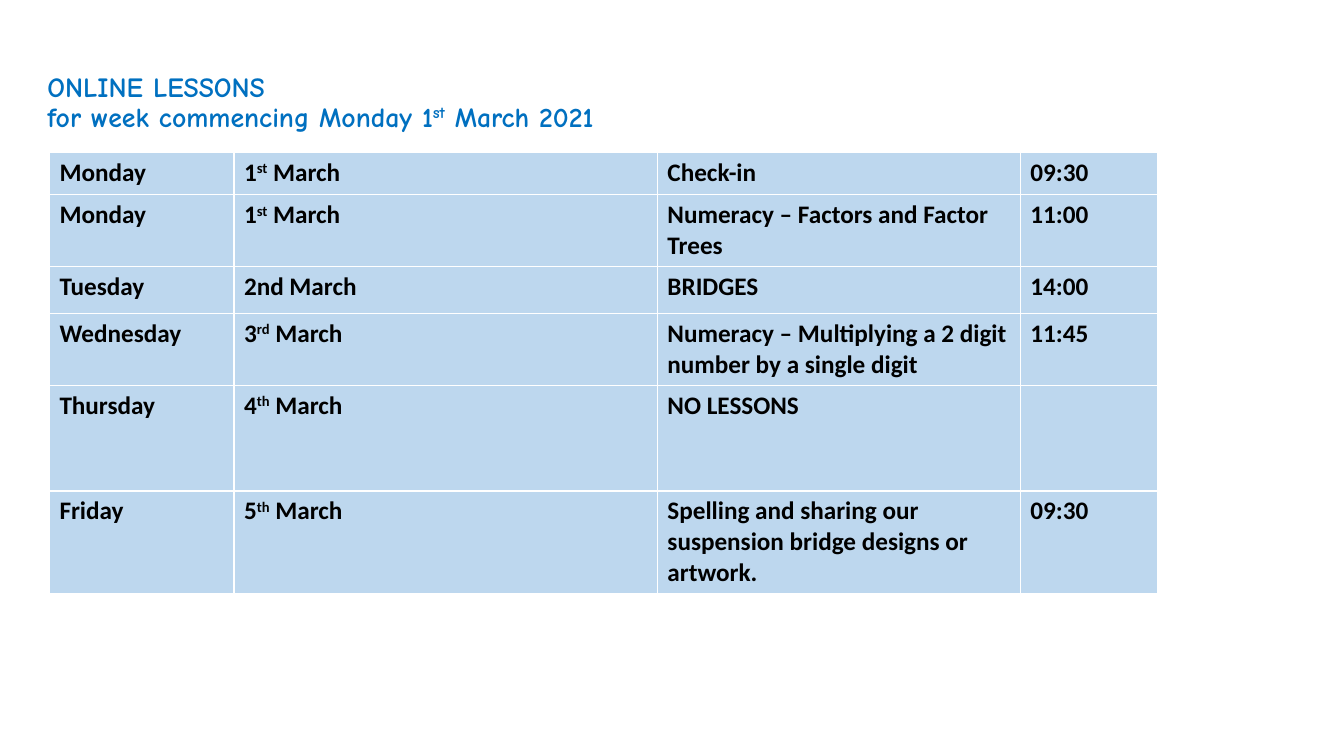
from pptx import Presentation
from pptx.dml.color import RGBColor
from pptx.enum.text import MSO_ANCHOR, MSO_AUTO_SIZE, PP_ALIGN
from pptx.util import Inches, Pt

BLUE, PALE_BLUE, BLACK = "0070C0", "BDD7EE", "000000"
COLUMN_WIDTHS = [1.83, 4.2, 3.6, 1.36]
ROW_HEIGHTS = [0.42, 0.48, 0.47, 0.56, 1.05, 0.56]

# Day, date (number, ordinal suffix, raised or not), lesson, time
LESSONS = [
    ("Monday", [("1", False), ("st", True), (" March", False)],
     "Check-in", "09:30"),
    ("Monday", [("1", False), ("st", True), (" March", False)],
     "Numeracy – Factors and Factor Trees", "11:00"),
    ("Tuesday", "2nd March", "BRIDGES", "14:00"),
    ("Wednesday", [("3", False), ("rd", True), (" March", False)],
     "Numeracy – Multiplying a 2 digit number by a single digit", "11:45"),
    ("Thursday", [("4", False), ("th", True), (" March", False)],
     "NO LESSONS", ""),
    ("Friday", [("5", False), ("th", True), (" March", False)],
     "Spelling and sharing our suspension bridge designs or artwork.", "09:30"),
]


def rgb(value):
    return RGBColor.from_string(value)


def add_run(p, text, font, size, color, raised=False):
    r = p.add_run()
    r.text = text
    r.font.name = font
    r.font.size = Pt(size)
    r.font.bold = True
    r.font.color.rgb = rgb(color)
    if raised:
        r.font._element.set("baseline", "30000")


def add_title(s):
    title = s.shapes.title
    title.left, title.top = Inches(0.37), Inches(0.3)
    title.width, title.height = Inches(11.5), Inches(1.45)
    tf = title.text_frame
    tf.word_wrap = True
    tf.auto_size = MSO_AUTO_SIZE.NONE
    tf.vertical_anchor = MSO_ANCHOR.MIDDLE
    p = tf.paragraphs[0]
    p.alignment = PP_ALIGN.LEFT
    p.line_spacing = 0.9
    style = ("Comic Neue", 19.8, BLUE)
    add_run(p, "ONLINE LESSONS", *style)
    p.add_line_break()
    add_run(p, "for week commencing Monday 1", *style)
    add_run(p, "st", *style, raised=True)
    add_run(p, " March 2021", *style)


def fill_cell(cell, content):
    cell.fill.solid()
    cell.fill.fore_color.rgb = rgb(PALE_BLUE)
    parts = [(content, False)] if isinstance(content, str) else content
    p = cell.text_frame.paragraphs[0]
    for text, raised in parts:
        if text:
            add_run(p, text, "Calibri", 18, BLACK, raised)


def add_timetable(s):
    table = s.shapes.add_table(
        len(LESSONS), len(COLUMN_WIDTHS), Inches(0.49), Inches(1.51),
        Inches(sum(COLUMN_WIDTHS)), Inches(sum(ROW_HEIGHTS))).table
    table.horz_banding = False
    for column, width in zip(table.columns, COLUMN_WIDTHS):
        column.width = Inches(width)
    for row, height, lesson in zip(table.rows, ROW_HEIGHTS, LESSONS):
        row.height = Inches(height)
        for cell, content in zip(row.cells, lesson):
            fill_cell(cell, content)


def main():
    prs = Presentation()
    prs.slide_width, prs.slide_height = Inches(13.33), Inches(7.5)
    s = prs.slides.add_slide(prs.slide_layouts[5])
    add_title(s)
    add_timetable(s)
    prs.save("out.pptx")


if __name__ == "__main__":
    main()
